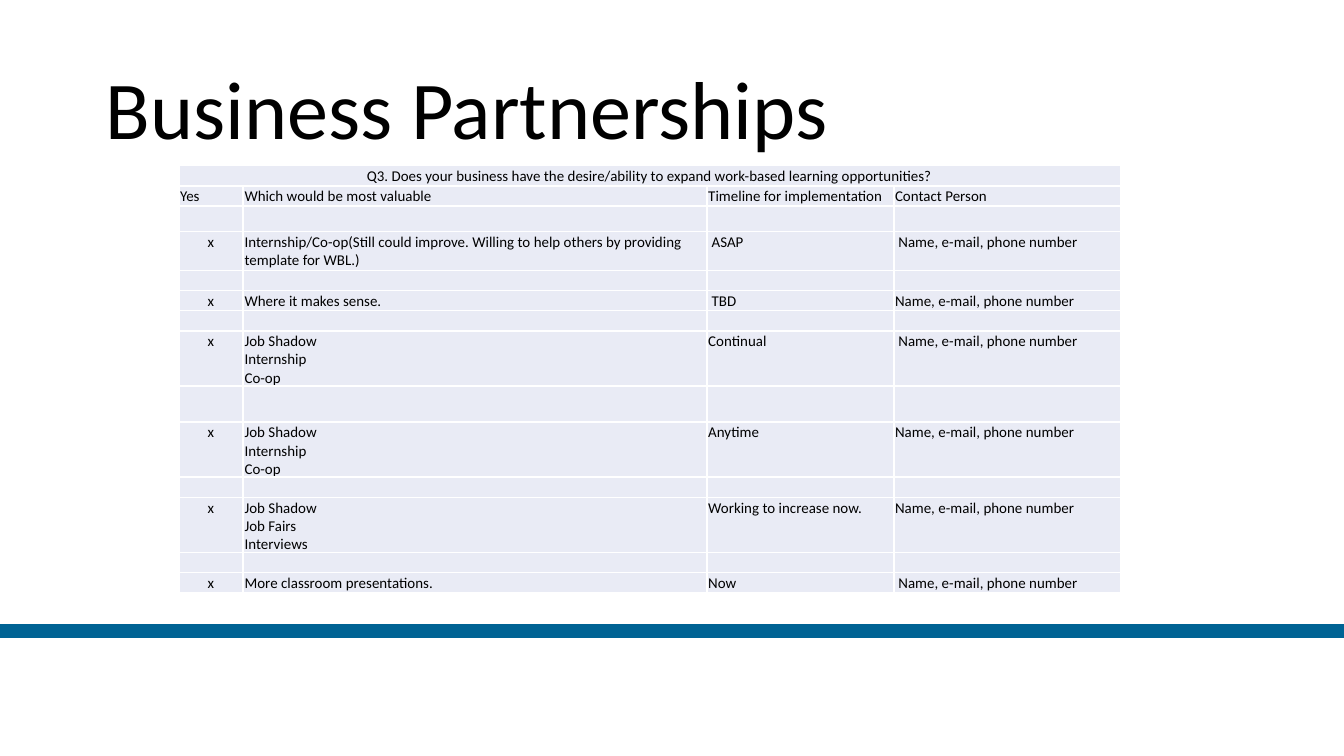
from typing import NamedTuple

from lxml.etree import SubElement
from pptx import Presentation
from pptx.dml.color import RGBColor
from pptx.enum.shapes import MSO_SHAPE as Shape
from pptx.enum.text import MSO_ANCHOR as Anchor, PP_ALIGN as Align
from pptx.oxml.ns import qn
from pptx.util import Emu, Inches, Pt

WHITE = RGBColor(0xFF, 0xFF, 0xFF)
BLACK = RGBColor(0x00, 0x00, 0x00)
BLUE = RGBColor(0x00, 0x63, 0x94)
PALE = RGBColor(0xE9, 0xEB, 0xF5)
FONT = "Calibri"
WIDTH = Inches(10)
HEIGHT = Emu(WIDTH * 9 // 16)
COLUMNS = (0.48, 3.45, 1.39, 1.69)
LINE, TRIPLE = 0.15, 0.41
CONTACT = "Name, e-mail, phone number"
INDENTED_CONTACT = " Name, e-mail, phone number"


class Box(NamedTuple):
    left: float
    top: float
    width: float
    height: float

    def place(self) -> tuple[Emu, ...]:
        sizes = (WIDTH, HEIGHT, WIDTH, HEIGHT)
        return tuple(Emu(round(share * size)) for share, size in zip(self, sizes))


class Row(NamedTuple):
    cells: tuple[str, ...] = ("",) * len(COLUMNS)
    height: float = LINE


def reply(value: str, timeline: str, contact: str = CONTACT, height: float = LINE) -> Row:
    return Row(("x", value, timeline, contact), height)


TITLE = Box(0.069, 0.053, 0.862, 0.194)
TABLE = Box(0.133, 0.219, 0.701, 0.562)
BAND = Box(0, 0.827, 1, 0.016)
QUESTION = "Q3. Does your business have the desire/ability to expand work-based learning opportunities?"
ROWS = (
    Row((QUESTION, "", "", "")),
    Row(("Yes", "Which would be most valuable", "Timeline for implementation", "Contact Person")),
    Row(height=0.19),
    reply("Internship/Co-op(Still could improve. Willing to help others by providing template for WBL.)",
          " ASAP", INDENTED_CONTACT, 0.29),
    Row(),
    reply("Where it makes sense.", " TBD"),
    Row(),
    reply("Job Shadow\nInternship\nCo-op", "Continual", INDENTED_CONTACT, TRIPLE),
    Row(height=0.27),
    reply("Job Shadow\nInternship\nCo-op", "Anytime", height=TRIPLE),
    Row(),
    reply("Job Shadow\nJob Fairs\nInterviews", "Working to increase now.", height=TRIPLE),
    Row(),
    reply("More classroom presentations.", "Now", INDENTED_CONTACT),
)


def write(tf, text: str, *, size: float, align=Align.LEFT, spacing: float = 1.0) -> None:
    p = tf.paragraphs[0]
    p.alignment, p.line_spacing = align, spacing
    if not text:
        SubElement(p._p, qn("a:endParaRPr")).set("sz", str(int(size * 100)))
        return
    for i, line in enumerate(text.split("\n")):
        if i:
            p.add_line_break()
            SubElement(p._p[-1], qn("a:rPr")).set("sz", str(int(size * 100)))
        r = p.add_run()
        r.text = line
        r.font.name, r.font.size = FONT, Pt(size)
        r.font.color.rgb = BLACK


def add_borders(cell) -> None:
    props = cell._tc.get_or_add_tcPr()
    for i, side in enumerate(("lnL", "lnR", "lnT", "lnB")):
        line = props.makeelement(qn(f"a:{side}"), {"w": str(int(Pt(1)))})
        fill = SubElement(line, qn("a:solidFill"))
        SubElement(fill, qn("a:srgbClr")).set("val", str(WHITE))
        props.insert(i, line)


def add_band(s, box: Box) -> None:
    sp = s.shapes.add_shape(Shape.RECTANGLE, *box.place())
    sp.shadow.inherit = False
    sp.fill.solid()
    sp.fill.fore_color.rgb = BLUE
    sp.line.color.rgb = BLUE
    sp.line.width = Pt(1)


def add_title(s, box: Box, text: str) -> None:
    tf = s.shapes.add_textbox(*box.place()).text_frame
    tf.word_wrap = True
    tf.vertical_anchor = Anchor.MIDDLE
    write(tf, text, size=44, spacing=0.9)


def add_table(s, box: Box, rows: tuple[Row, ...]) -> None:
    table = s.shapes.add_table(len(rows), len(COLUMNS), *box.place()).table
    table.first_row = table.horz_banding = False
    for column, width in zip(table.columns, COLUMNS):
        column.width = Inches(width)
    for i, row in enumerate(rows):
        table.rows[i].height = Inches(row.height)
        for j, text in enumerate(row.cells):
            cell = table.cell(i, j)
            cell.margin_left = cell.margin_right = cell.margin_top = Inches(0.01)
            cell.margin_bottom = 0
            cell.vertical_anchor = Anchor.BOTTOM if i == 0 else Anchor.TOP
            cell.fill.solid()
            cell.fill.fore_color.rgb = PALE
            add_borders(cell)
            centred = i == 0 or text == "x"
            write(cell.text_frame, text, size=8, align=Align.CENTER if centred else Align.LEFT)
    table.cell(0, 0).merge(table.cell(0, len(COLUMNS) - 1))


def main() -> None:
    prs = Presentation()
    prs.slide_width, prs.slide_height = WIDTH, HEIGHT
    s = prs.slides.add_slide(prs.slide_layouts[6])
    s.background.fill.solid()
    s.background.fill.fore_color.rgb = WHITE
    add_band(s, BAND)
    add_title(s, TITLE, "Business Partnerships")
    add_table(s, TABLE, ROWS)
    prs.save("out.pptx")


if __name__ == "__main__":
    main()
